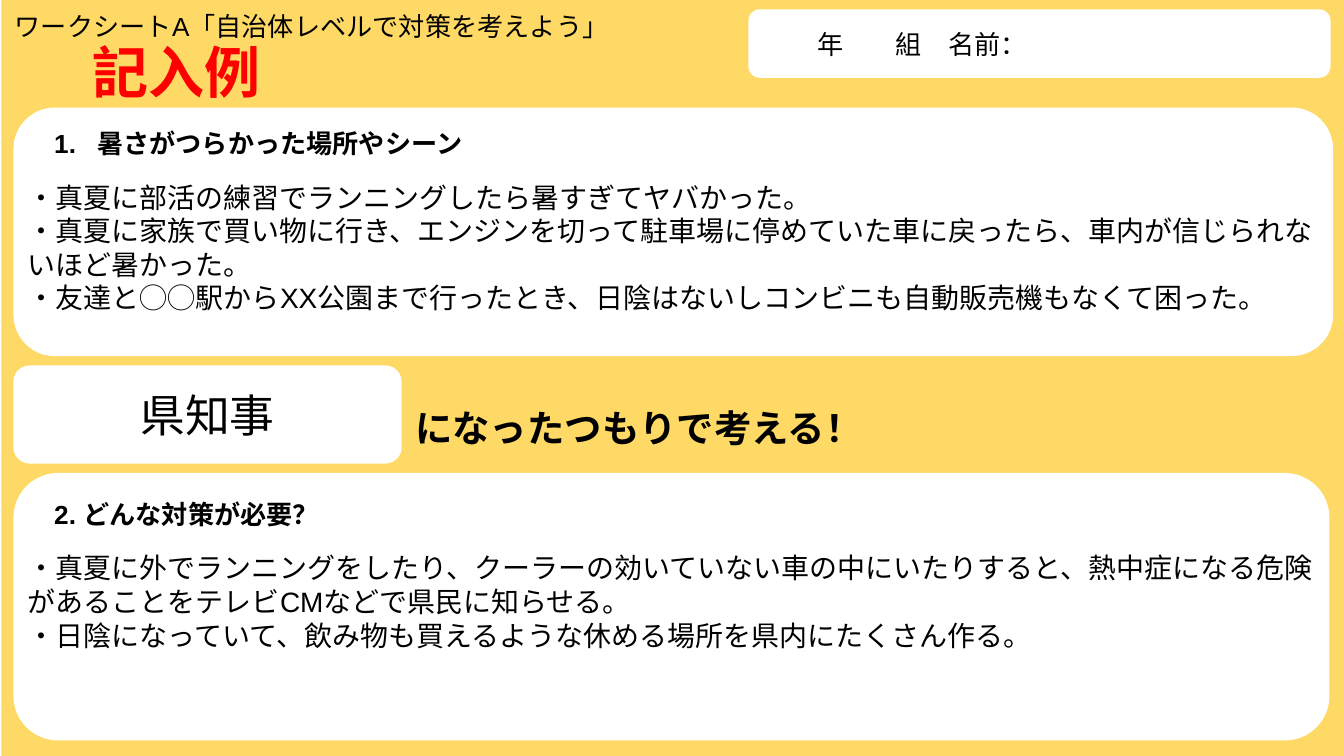
"""Build the filled-in example of the heat worksheet."""
from dataclasses import dataclass

from lxml.etree import SubElement
from pptx import Presentation
from pptx.dml.color import RGBColor
from pptx.enum.shapes import MSO_SHAPE
from pptx.enum.text import MSO_ANCHOR, MSO_AUTO_SIZE, PP_ALIGN
from pptx.oxml.ns import qn
from pptx.util import Pt

RECT, ROUND = MSO_SHAPE.RECTANGLE, MSO_SHAPE.ROUNDED_RECTANGLE
TOP, MID, LOW = MSO_ANCHOR.TOP, MSO_ANCHOR.MIDDLE, MSO_ANCHOR.BOTTOM
LEFT, MIDDLE = PP_ALIGN.LEFT, PP_ALIGN.CENTER
NO_FIT = MSO_AUTO_SIZE.NONE
FONT = "Arial"
INSET = 7.2
COLORS = {"back": "FFD966", "card": "FFFFFF", "ink": "000000", "mark": "FF0000"}


@dataclass
class Label:
    text: str
    size: float
    bold: bool = False
    color: str = "ink"
    align: PP_ALIGN = LEFT
    anchor: MSO_ANCHOR = TOP
    indent: float = 0
    tab: float = 0


@dataclass
class Box:
    left: float
    top: float
    width: float
    height: float
    label: Label | None = None

    def spot(self) -> tuple:
        return tuple(Pt(n) for n in (self.left, self.top, self.width, self.height))


def write(shape, label: Label) -> None:
    frame = shape.text_frame
    frame.text = label.text
    frame.word_wrap = True
    frame.auto_size = NO_FIT
    frame.vertical_anchor = label.anchor
    frame.margin_left = Pt(INSET + label.indent)
    frame.margin_top = frame.margin_right = frame.margin_bottom = Pt(INSET)
    for para in frame.paragraphs:
        para.alignment = label.align
        if label.tab:
            stops = SubElement(para._p.get_or_add_pPr(), qn("a:tabLst"))
            SubElement(stops, qn("a:tab"), pos=str(Pt(label.tab)), algn="l")
        for run in para.runs:
            font = run.font
            font.size = Pt(label.size)
            font.bold = label.bold
            font.name = FONT
            font.color.rgb = RGBColor.from_string(COLORS[label.color])
            SubElement(run._r.get_or_add_rPr(), qn("a:ea"), typeface=FONT)


def draw(slide, box: Box, kind: MSO_SHAPE = ROUND, color: str = "card") -> None:
    shape = slide.shapes.add_shape(kind, *box.spot())
    shape.shadow.inherit = False
    shape.fill.solid()
    shape.fill.fore_color.rgb = RGBColor.from_string(COLORS[color])
    shape.line.fill.background()
    if box.label:
        write(shape, box.label)


def note(slide, box: Box) -> None:
    write(slide.shapes.add_textbox(*box.spot()), box.label)


def head(slide, box: Box) -> None:
    title = slide.shapes.title
    title.left, title.top, title.width, title.height = box.spot()
    write(title, box.label)
    title.element.getparent().append(title.element)


BACK = Box(0.7, 0, 720, 405)
TITLE = Box(0.7, -1.4, 339, 31.7, Label("ワークシートA「自治体レベルで対策を考えよう」", 14))
CARDS = [
    Box(401, 5, 311.8, 36.7, Label("年\t組　名前：", 14, anchor=MID, indent=28, tab=42)),
    Box(7.2, 57.6, 707, 133.2),
    Box(7.2, 253.4, 705, 143.3),
    Box(7.2, 195.8, 208, 52.6, Label("県知事", 24, align=MIDDLE, anchor=MID)),
    Box(20.2, 58.3, 272, 36.7,
        Label("1.\t暑さがつらかった場所やシーン", 14, True, anchor=MID, tab=23)),
    Box(20.2, 257, 246, 36.7, Label("2. どんな対策が必要？", 14, True, anchor=MID)),
]
SCENES = "\n".join([
    "・真夏に部活の練習でランニングしたら暑すぎてヤバかった。",
    "・真夏に家族で買い物に行き、エンジンを切って駐車場に停めていた車に戻ったら、車内が信じられないほど暑かった。",
    "・友達と◯◯駅からXX公園まで行ったとき、日陰はないしコンビニも自動販売機もなくて困った。",
])
PLANS = "\n".join([
    "・真夏に外でランニングをしたり、クーラーの効いていない車の中にいたりすると、"
    "熱中症になる危険があることをテレビCMなどで県民に知らせる。",
    "・日陰になっていて、飲み物も買えるような休める場所を県内にたくさん作る。",
])
NOTES = [
    Box(215.3, 209.5, 339, 38.9, Label("になったつもりで考える！", 20, True, anchor=LOW)),
    Box(7.9, 89.3, 705, 87, Label(SCENES, 15)),
    Box(7.9, 288, 707, 69, Label(PLANS, 15)),
    Box(6.5, 13, 175.7, 51, Label("記入例", 30, True, "mark", MIDDLE)),
]


def main() -> None:
    deck = Presentation()
    deck.slide_width, deck.slide_height = Pt(720), Pt(405)
    slide = deck.slides.add_slide(deck.slide_layouts[5])
    draw(slide, BACK, RECT, "back")
    head(slide, TITLE)
    for card in CARDS:
        draw(slide, card)
    for box in NOTES:
        note(slide, box)
    deck.save("out.pptx")


if __name__ == "__main__":
    main()
